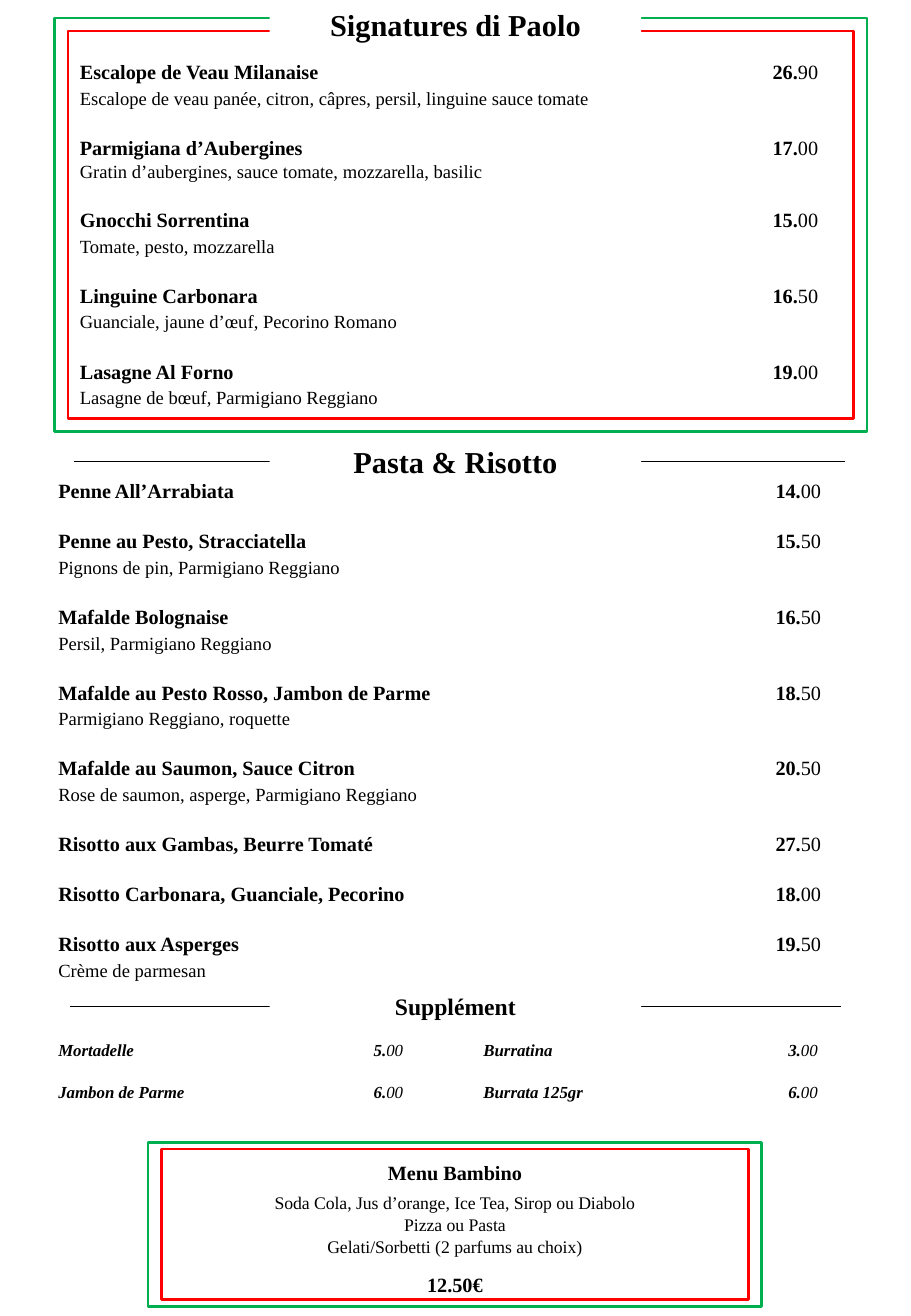
import pptx
import pptx.util
import pptx.dml.color
import pptx.enum.shapes
import pptx.enum.text
import pptx.oxml.ns
import lxml.etree

Cm, Pt = pptx.util.Cm, pptx.util.Pt
RGBColor = pptx.dml.color.RGBColor
ALIGN = pptx.enum.text.PP_ALIGN
ANCHOR = pptx.enum.text.MSO_ANCHOR
RECT = pptx.enum.shapes.MSO_SHAPE.RECTANGLE
qn = pptx.oxml.ns.qn

BLACK = RGBColor(0x00, 0x00, 0x00)
WHITE = RGBColor(0xFF, 0xFF, 0xFF)
GREEN = RGBColor(0x00, 0xB0, 0x50)
RED = RGBColor(0xFF, 0x00, 0x00)
FONT = "Times New Roman"
SLIDE_W, SLIDE_H = 19.05, 27.51
HEADING_W = 7.77

# Dishes: name, price, description
SIGNATURES = [
    ("Escalope de Veau Milanaise", "26.90",
     "Escalope de veau panée, citron, câpres, persil, linguine sauce tomate"),
    ("Parmigiana d’Aubergines", "17.00",
     "Gratin d’aubergines, sauce tomate, mozzarella, basilic"),
    ("Gnocchi Sorrentina", "15.00", "Tomate, pesto, mozzarella"),
    ("Linguine Carbonara", "16.50", "Guanciale, jaune d’œuf, Pecorino Romano"),
    ("Lasagne Al Forno", "19.00", "Lasagne de bœuf, Parmigiano Reggiano"),
]
PASTA = [
    ("Penne All’Arrabiata", "14.00", ""),
    ("Penne au Pesto, Stracciatella", "15.50", "Pignons de pin, Parmigiano Reggiano"),
    ("Mafalde Bolognaise", "16.50", "Persil, Parmigiano Reggiano"),
    ("Mafalde au Pesto Rosso, Jambon de Parme", "18.50", "Parmigiano Reggiano, roquette"),
    ("Mafalde au Saumon, Sauce Citron", "20.50",
     "Rose de saumon, asperge, Parmigiano Reggiano"),
    ("Risotto aux Gambas, Beurre Tomaté", "27.50", ""),
    ("Risotto Carbonara, Guanciale, Pecorino", "18.00", ""),
    ("Risotto aux Asperges", "19.50", "Crème de parmesan"),
]
EXTRAS_LEFT = [("Mortadelle", "5.00", ""), ("Jambon de Parme", "6.00", "")]
EXTRAS_RIGHT = [("Burratina", "3.00", ""), ("Burrata 125gr", "6.00", "")]
# Children's menu: text, size, bold, space before
BAMBINO = [
    ("Menu Bambino", 12, True, 0),
    ("Soda Cola, Jus d’orange, Ice Tea, Sirop ou Diabolo", 10.5, False, 4.3),
    ("Pizza ou Pasta", 10.5, False, 0.6),
    ("Gelati/Sorbetti (2 parfums au choix)", 10.5, False, 0.6),
    ("12.50€", 12, True, 9),
]


def add_run(p, text, size, bold=False, italic=False):
    r = p.add_run()
    r.text = text
    r.font.name, r.font.size = FONT, Pt(size)
    r.font.bold, r.font.italic = bold, italic
    r.font.color.rgb = BLACK


def next_paragraph(tf, i):
    return tf.add_paragraph() if i else tf.paragraphs[0]


def no_margins(tf):
    tf.margin_left = tf.margin_right = tf.margin_top = tf.margin_bottom = 0


def add_frame(slide, box, color):
    sp = slide.shapes.add_shape(RECT, *map(Cm, box))
    sp.shadow.inherit = False
    sp.fill.background()
    sp.line.color.rgb = color
    sp.line.width = Pt(1.5)
    return sp


def double_frame(slide, box, dx, dy):
    x, y, w, h = box
    add_frame(slide, (x + dx, y + dy, w - 2 * dx, h - 2 * dy), RED)
    return add_frame(slide, box, GREEN)


def format_heading(sp, y, h, text, size):
    """Centre a white heading band on the slide."""
    sp.left, sp.top = Cm((SLIDE_W - HEADING_W) / 2), Cm(y)
    sp.width, sp.height = Cm(HEADING_W), Cm(h)
    sp.fill.solid()
    sp.fill.fore_color.rgb = WHITE
    tf = sp.text_frame
    no_margins(tf)
    tf.word_wrap = True
    tf.auto_size = pptx.enum.text.MSO_AUTO_SIZE.NONE
    tf.vertical_anchor = ANCHOR.MIDDLE
    p = tf.paragraphs[0]
    p.alignment = ALIGN.CENTER
    add_run(p, text, size, bold=True)


def ruled_heading(slide, box, text, size):
    x, y, w, h = box
    mid = Cm(y + h / 2)
    rule = slide.shapes.add_connector(
        pptx.enum.shapes.MSO_CONNECTOR.STRAIGHT, Cm(x), mid, Cm(x + w), mid)
    rule.line.color.rgb = BLACK
    rule.line.width = Pt(0.5)
    lxml.etree.SubElement(rule._element.spPr, qn("a:effectLst"))
    sp = slide.shapes.add_shape(RECT, 0, 0, 0, 0)
    sp.shadow.inherit = False
    sp.line.fill.background()
    format_heading(sp, y, h, text, size)


def price_list(slide, box, dishes, tab, size=12, italic=False, line=15, gap=14.8):
    """List dishes with prices on a right tab, descriptions below."""
    tb = slide.shapes.add_textbox(*map(Cm, box))
    tf = tb.text_frame
    tf.word_wrap = True
    no_margins(tf)
    for i, (name, price, description) in enumerate(dishes):
        p = next_paragraph(tf, i)
        if line:
            p.line_spacing = Pt(line)
        if i:
            p.space_before = Pt(gap)
        tabs = lxml.etree.SubElement(p._p.get_or_add_pPr(), qn("a:tabLst"))
        lxml.etree.SubElement(tabs, qn("a:tab"), pos=str(Cm(tab)), algn="r")
        euros, cents = price.split(".")
        add_run(p, f"{name}\t{euros}.", size, True, italic)
        add_run(p, cents, size, False, italic)
        if description:
            p = tf.add_paragraph()
            p.line_spacing = Pt(line)
            add_run(p, description, 11)
    return tf


def signatures(slide, box):
    x, y, w, h = box
    double_frame(slide, box, 0.28, 0.27)
    tf = price_list(slide, (x + 0.53, y + 0.84, w - 1, h - 1.2), SIGNATURES, 15.44, gap=15)
    # The second description sits closer to its dish
    tf.paragraphs[3].line_spacing = Pt(13.2)
    tf.paragraphs[4].space_before = Pt(14.4)
    # Title goes above the frames to interrupt them
    title = slide.shapes.title
    format_heading(title, y - 0.25, 0.76, "Signatures di Paolo", 18)
    slide.shapes._spTree.append(title._element)


def pasta(slide, box):
    x, y, w, h = box
    ruled_heading(slide, (x + 0.33, y, w - 0.79, 0.76), "Pasta & Risotto", 18)
    price_list(slide, (x, y + 0.71, w, h - 0.71), PASTA, 15.95)


def extras(slide, box):
    x, y, w, h = box
    ruled_heading(slide, (x + 0.25, y, w - 0.81, 0.61), "Supplément", 14)
    for dx, dishes, tab in ((0, EXTRAS_LEFT, 7.21), (8.89, EXTRAS_RIGHT, 6.99)):
        price_list(slide, (x + dx, y + 1.01, 8.03, h - 1.01), dishes, tab,
                   size=10, italic=True, line=None, gap=12.8)


def bambino(slide, box):
    tf = double_frame(slide, box, 0.28, 0.14).text_frame
    tf.word_wrap = True
    tf.vertical_anchor = ANCHOR.TOP
    tf.margin_top = Cm(0.37)
    for i, (text, size, bold, gap) in enumerate(BAMBINO):
        p = next_paragraph(tf, i)
        p.alignment = ALIGN.CENTER
        p.space_before = Pt(gap)
        add_run(p, text, size, bold)


def main():
    prs = pptx.Presentation()
    prs.slide_width, prs.slide_height = Cm(SLIDE_W), Cm(SLIDE_H)
    slide = prs.slides.add_slide(prs.slide_layouts[5])
    signatures(slide, (1.14, 0.38, 16.99, 8.64))
    pasta(slide, (1.22, 9.27, 16.92, 11.33))
    extras(slide, (1.22, 20.73, 16.92, 2.28))
    bambino(slide, (3.1, 23.88, 12.83, 3.43))
    prs.save("out.pptx")


if __name__ == "__main__":
    main()
